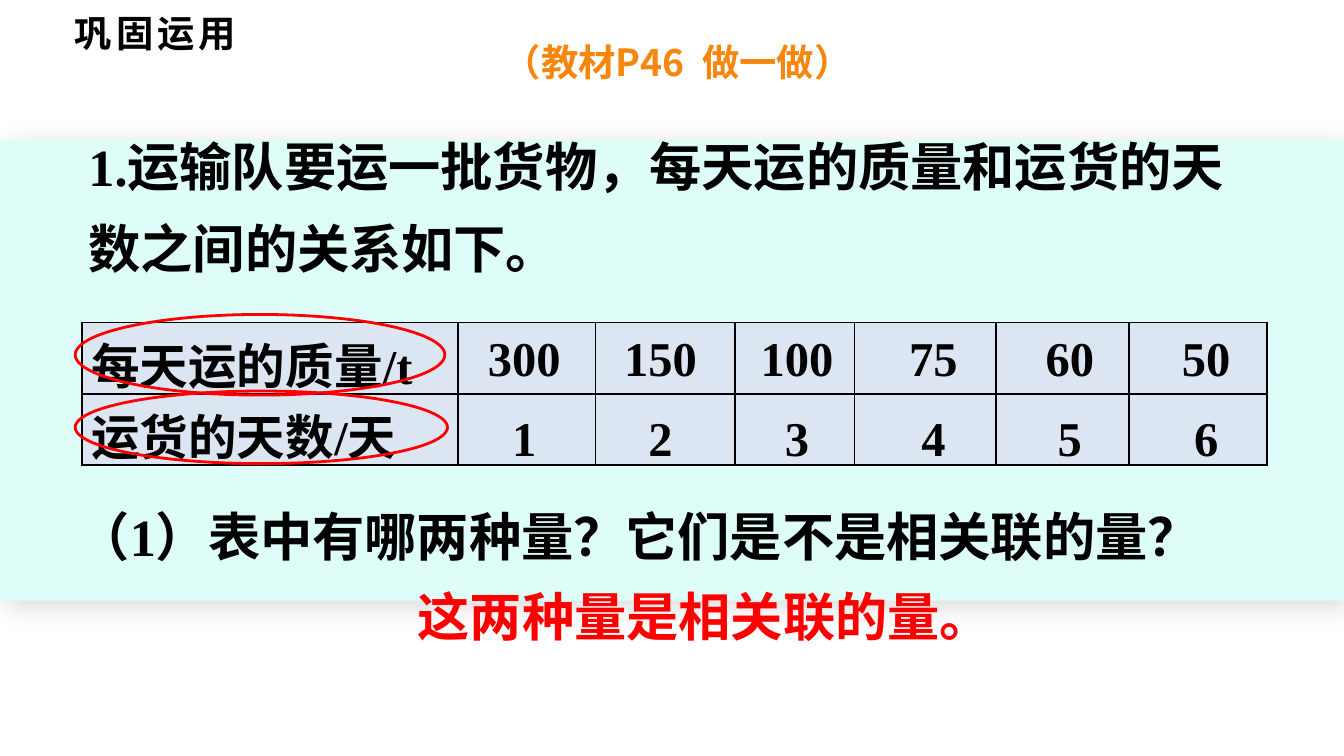
from lxml import etree
from pptx import Presentation
from pptx.dml.color import RGBColor
from pptx.enum.shapes import MSO_SHAPE
from pptx.enum.text import MSO_ANCHOR, PP_ALIGN
from pptx.oxml import parse_xml
from pptx.oxml.ns import nsdecls, qn
from pptx.util import Inches, Pt

RECT, OVAL = MSO_SHAPE.RECTANGLE, MSO_SHAPE.OVAL
LEFT, CENTER, MIDDLE = PP_ALIGN.LEFT, PP_ALIGN.CENTER, MSO_ANCHOR.MIDDLE
SANS, SERIF = "Noto Sans CJK SC", "Times New Roman"
BLACK, RED, ORANGE = "000000", "FF0000", "F7860C"
MINT, PALE_BLUE = "DEFDF8", "DCE6F2"
COLUMNS = [2.8, 1.02, 1.04, 0.89, 1.05, 0.99, 1.03]
ROW_LABELS = ["每天运的质量/t", "运货的天数/天"]
ROW_VALUES = [["300", "150", "100", "75", "60", "50"], ["1", "2", "3", "4", "5", "6"]]


def rgb(color):
    """Turn a hex string into a colour."""
    return RGBColor.from_string(color)


def add_run(p, text, size, font=SERIF, color=BLACK, spacing=None):
    """Add a bold run whose Chinese characters are always sans serif."""
    r = p.add_run()
    r.text = text
    r.font.size, r.font.bold, r.font.name = Pt(size), True, font
    r.font.color.rgb = rgb(color)
    props = r.font._element
    etree.SubElement(props, qn("a:ea")).set("typeface", SANS)
    if spacing:
        props.set("spc", str(spacing * 100))


def add_text(s, box, runs, align=LEFT, line_spacing=None, wrap=True):
    """Add a one-paragraph text box; each run holds the arguments of add_run."""
    tf = s.shapes.add_textbox(*map(Inches, box)).text_frame
    tf.word_wrap = wrap
    p = tf.paragraphs[0]
    p.alignment = align
    if line_spacing:
        p.line_spacing = line_spacing
    for run in runs:
        add_run(p, *run)


def add_band(s):
    """Add the full-width mint band with its soft shadow."""
    sp = s.shapes.add_shape(RECT, *map(Inches, (0, 1.04, 10, 3.43)))
    sp.fill.solid()
    sp.fill.fore_color.rgb = rgb(MINT)
    sp.line.fill.background()
    sp._element.spPr.append(parse_xml(
        f'<a:effectLst {nsdecls("a")}><a:outerShdw blurRad="{Pt(15)}" dist="{Pt(5)}" '
        f'dir="2700000" algn="tl" rotWithShape="0"><a:srgbClr val="{BLACK}">'
        '<a:alpha val="15000"/></a:srgbClr></a:outerShdw></a:effectLst>'))


def add_ring(s, box):
    """Add a red ellipse outline around a row label."""
    sp = s.shapes.add_shape(OVAL, *map(Inches, box))
    sp.shadow.inherit = False
    sp.fill.background()
    sp.line.color.rgb = rgb(RED)
    sp.line.width = Pt(1.5)


def style_cell(cell):
    """Give a cell its fill, margins and black borders."""
    cell.fill.solid()
    cell.fill.fore_color.rgb = rgb(PALE_BLUE)
    cell.vertical_anchor = MIDDLE
    cell.margin_left = cell.margin_right = Inches(0.07)
    cell.margin_top = cell.margin_bottom = Inches(0.04)
    for i, side in enumerate(("lnL", "lnR", "lnT", "lnB")):
        cell._tc.tcPr.insert(i, parse_xml(
            f'<a:{side} {nsdecls("a")} w="{Pt(1)}"><a:solidFill>'
            f'<a:srgbClr val="{BLACK}"/></a:solidFill></a:{side}>'))


def add_quantity_table(s):
    """Add the table with its row labels."""
    box = map(Inches, (0.61, 2.4, sum(COLUMNS), 1.06))
    table = s.shapes.add_table(len(ROW_LABELS), len(COLUMNS), *box).table
    for column, width in zip(table.columns, COLUMNS):
        column.width = Inches(width)
    for cell in table.iter_cells():
        style_cell(cell)
    for row, label in enumerate(ROW_LABELS):
        p = table.cell(row, 0).text_frame.paragraphs[0]
        p._p.get_or_add_pPr().append(parse_xml(
            f'<a:spcBef {nsdecls("a")}><a:spcPct val="20000"/></a:spcBef>'))
        add_run(p, label, 26)


def add_values(s):
    """Place the values over the table at an even pitch."""
    for row, values in enumerate(ROW_VALUES):
        for i, value in enumerate(values):
            box = (3.44 + 1.015 * i, 2.39 + 0.6 * row, 0.92, 0.54)
            add_text(s, box, [(value, 26)], CENTER)


def main():
    """Build the slide and save it."""
    prs = Presentation()
    prs.slide_width, prs.slide_height = Inches(10), Inches(10 * 9 / 16)
    s = prs.slides.add_slide(prs.slide_layouts[6])
    add_band(s)
    add_text(s, (0.46, 0.03, 1.43, 0.44), [("巩固运用", 20, SANS, BLACK, 2)], wrap=False)
    add_quantity_table(s)
    add_text(s, (0.48, 3.7, 8.93, 0.57),
             [("（1）", 28), ("表中有哪两种量？它们是不是相关联的量？", 28, SANS)])
    add_text(s, (3.01, 4.3, 4.49, 0.57), [("这两种量是相关联的量。", 28, SANS, RED)])
    add_text(s, (0.56, 0.81, 8.81, 1.32),
             [("1.运输队要运一批货物，每天运的质量和运货的天数之间的关系如下。", 28)],
             line_spacing=1.3)
    add_values(s)
    add_ring(s, (0.56, 2.34, 2.75, 0.6))
    add_ring(s, (0.56, 2.91, 2.77, 0.54))
    add_text(s, (3.65, 0.24, 3.14, 0.44), [("（教材P46  做一做）", 20, SANS, ORANGE)])
    prs.save("out.pptx")


if __name__ == "__main__":
    main()
